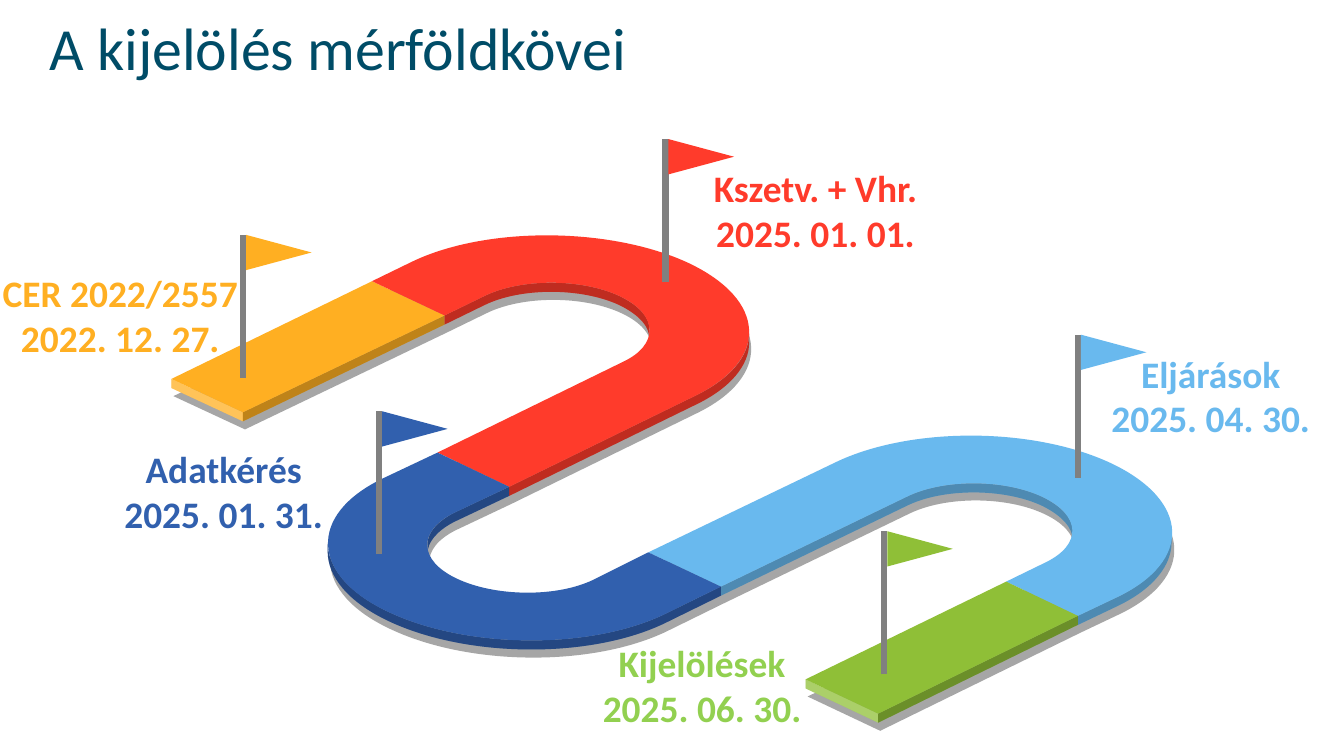
from dataclasses import dataclass

from lxml.etree import SubElement
from pptx import Presentation
from pptx.dml.color import RGBColor
from pptx.enum.shapes import MSO_CONNECTOR, MSO_SHAPE
from pptx.enum.text import PP_ALIGN
from pptx.oxml.ns import qn
from pptx.util import Inches, Pt


@dataclass(frozen=True)
class Theme:
    font: str = "Calibri"
    title_size: float = 42.7
    label_size: float = 26.7
    title: str = "004C67"
    sky: str = "69B9EE"
    amber: str = "FFAF22"
    red: str = "FF3B2B"
    navy: str = "3160AE"
    green: str = "8FBF37"
    green_text: str = "92D050"
    pole: str = "808080"
    shadow: str = "A6A6A6"
    shade: str = "000000"
    light: str = "FFFFFF"


theme = Theme()
THICKNESS = 0.09
SHADOW_DX, SHADOW_DY = 0.02, 0.17
POLE_HEIGHT = 1.42
FLAG_WIDTH, FLAG_LENGTH = 0.35, 0.65

prs = Presentation()
prs.slide_width, prs.slide_height = Inches(13.33), Inches(7.5)
s = prs.slides.add_slide(prs.slide_layouts[6])


def moved(path, dx, dy):
    return [tuple(v + (dy if i % 2 else dx) for i, v in enumerate(step))
            for step in path]


def add_area(contours, color, opacity=100):
    """Fill outlines made of points (x, y) and curves (two controls and an end)."""
    contours = [[tuple(Inches(v) for v in step) for step in c] for c in contours]
    builder = s.shapes.build_freeform(*contours[0][0])
    for i, contour in enumerate(contours):
        if i:
            builder.move_to(*contour[0])
        builder.add_line_segments([step[-2:] for step in contour[1:]], close=True)
    sp = builder.convert_to_shape()
    # Lines that stand for curves become cubic segments
    steps = [step for contour in contours for step in contour[1:]]
    for segment, step in zip(list(sp._element.iter(qn("a:lnTo"))), steps):
        if len(step) == 6:
            segment.clear()
            segment.tag = qn("a:cubicBezTo")
            for x, y in zip(step[::2], step[1::2]):
                pt = SubElement(segment, qn("a:pt"))
                pt.set("x", str(x - builder.shape_offset_x))
                pt.set("y", str(y - builder.shape_offset_y))
    sp.shadow.inherit = False
    sp.line.fill.background()
    sp.fill.solid()
    sp.fill.fore_color.rgb = RGBColor.from_string(color)
    if opacity < 100:
        rgb = sp._element.spPr.find(f"{qn('a:solidFill')}/{qn('a:srgbClr')}")
        SubElement(rgb, qn("a:alpha")).set("val", str(opacity * 1000))


# Road sections: colour, top surface, visible edges with their tint
sections = [
    (theme.sky,
     [(11.09, 5.92), (10.69, 6.11), (9.98, 5.77), (10.37, 5.58),
      (10.74, 5.4, 10.72, 5.11, 10.34, 4.93), (9.96, 4.75, 9.35, 4.75, 8.99, 4.93),
      (7.15, 5.82), (6.43, 5.48), (8.28, 4.59),
      (9.02, 4.23, 10.25, 4.23, 11.03, 4.6), (11.8, 4.97, 11.83, 5.56, 11.09, 5.92)],
     [([(10.64, 5.27), (10.64, 5.15, 10.54, 5.03, 10.34, 4.93),
        (9.96, 4.75, 9.35, 4.75, 8.99, 4.93), (7.15, 5.82)], theme.shade),
      ([(11.62, 5.29), (11.62, 5.52, 11.44, 5.75, 11.09, 5.92), (10.69, 6.11)],
       theme.shade)]),
    (theme.amber,
     [(4.41, 3.13), (2.41, 4.09), (1.7, 3.76), (3.69, 2.79)],
     [([(1.7, 3.76), (2.41, 4.09)], theme.light),
      ([(4.41, 3.13), (2.41, 4.09)], theme.shade)]),
    (theme.red,
     [(6.89, 3.93), (5.05, 4.83), (4.34, 4.49), (6.18, 3.59),
      (6.54, 3.42, 6.53, 3.12, 6.15, 2.94), (5.77, 2.76, 5.16, 2.76, 4.8, 2.94),
      (4.41, 3.13), (3.69, 2.79), (4.08, 2.6),
      (4.82, 2.24, 6.06, 2.25, 6.83, 2.61), (7.61, 2.98, 7.63, 3.57, 6.89, 3.93)],
     [([(6.44, 3.28), (6.45, 3.16, 6.35, 3.04, 6.15, 2.94),
        (5.77, 2.76, 5.16, 2.76, 4.8, 2.94), (4.41, 3.13)], theme.shade),
      ([(7.43, 3.31), (7.43, 3.53, 7.25, 3.76, 6.89, 3.93), (5.05, 4.83)],
       theme.shade)]),
    (theme.navy,
     [(7.15, 5.82), (6.6, 6.09), (5.86, 6.45, 4.63, 6.44, 3.85, 6.07),
      (3.08, 5.71, 3.05, 5.11, 3.79, 4.75), (4.34, 4.49), (5.05, 4.83), (4.5, 5.09),
      (4.14, 5.27, 4.15, 5.56, 4.53, 5.74), (4.91, 5.92, 5.52, 5.93, 5.89, 5.75),
      (6.43, 5.48)],
     [([(5.05, 4.83), (4.5, 5.09), (4.33, 5.18, 4.24, 5.29, 4.24, 5.4)], theme.shade),
      ([(7.15, 5.82), (6.6, 6.09), (5.86, 6.45, 4.63, 6.44, 3.85, 6.07),
        (3.45, 5.88, 3.25, 5.63, 3.25, 5.38)], theme.shade)]),
    (theme.green,
     [(10.69, 6.11), (8.71, 7.08), (7.99, 6.74), (9.98, 5.77)],
     [([(7.99, 6.74), (8.71, 7.08)], theme.light),
      ([(10.69, 6.11), (8.71, 7.08)], theme.shade)]),
]

# Ground shadow of the whole road
add_area([moved(top, SHADOW_DX, SHADOW_DY) for _, top, _ in sections], theme.shadow)

# Road: side faces that drop from the edges, then the top surfaces
for color, top, edges in sections:
    for edge, tint in edges:
        lower = moved(edge, 0, THICKNESS)
        face = edge + [lower[-1][-2:]]
        for before, step in reversed(list(zip(lower, lower[1:]))):
            controls = step[2:4] + step[:2] if len(step) == 6 else ()
            face.append(controls + before[-2:])
        add_area([face], color)
        add_area([face], tint, opacity=25)
    add_area([top], color)

# Flags: pole x, pole top, colour
flags = [
    (2.41, 2.33, theme.amber),
    (3.76, 4.08, theme.navy),
    (8.77, 5.27, theme.green),
    (6.6, 1.38, theme.red),
    (10.69, 3.32, theme.sky),
]
for x, y, color in flags:
    pole = s.shapes.add_connector(MSO_CONNECTOR.STRAIGHT, Inches(x),
                                  Inches(y + POLE_HEIGHT), Inches(x), Inches(y))
    pole.line.color.rgb = RGBColor.from_string(theme.pole)
    pole.line.width = Pt(4.5)
    SubElement(pole._element.spPr, qn("a:effectLst"))
    sp = s.shapes.add_shape(MSO_SHAPE.ISOSCELES_TRIANGLE, Inches(x + 0.18),
                            Inches(y - 0.15), Inches(FLAG_WIDTH), Inches(FLAG_LENGTH))
    sp.rotation = 90
    sp.shadow.inherit = False
    sp.line.fill.background()
    sp.fill.solid()
    sp.fill.fore_color.rgb = RGBColor.from_string(color)

# Title
sp = s.shapes.add_textbox(Inches(0.49), Inches(0.11), Inches(12.26), Inches(0.89))
tf = sp.text_frame
tf.word_wrap = True
tf.margin_left = tf.margin_right = tf.margin_top = tf.margin_bottom = 0
p = tf.paragraphs[0]
p.text = "A kijelölés mérföldkövei"
p.font.name, p.font.size = theme.font, Pt(theme.title_size)
p.font.color.rgb = RGBColor.from_string(theme.title)

# Milestone labels: left, top, width, colour, name, date
labels = [
    (0.9, 4.38, 2.64, theme.navy, "Adatkérés", "2025. 01. 31."),
    (-0.12, 2.63, 2.63, theme.amber, "CER 2022/2557", "2022. 12. 27."),
    (6.96, 1.59, 2.26, theme.red, "Kszetv. + Vhr.", "2025. 01. 01."),
    (10.69, 3.43, 2.64, theme.sky, "Eljárások", "2025. 04. 30."),
    (5.63, 6.3, 2.67, theme.green_text, "Kijelölések", "2025. 06. 30."),
]
for left, top, width, color, name, date in labels:
    sp = s.shapes.add_textbox(Inches(left), Inches(top), Inches(width), Inches(1))
    tf = sp.text_frame
    tf.word_wrap = True
    tf.text = f"{name}\n{date}"
    for p in tf.paragraphs:
        p.alignment = PP_ALIGN.CENTER
        p.font.name, p.font.size = theme.font, Pt(theme.label_size)
        p.font.bold = True
        p.font.color.rgb = RGBColor.from_string(color)

prs.save("out.pptx")
